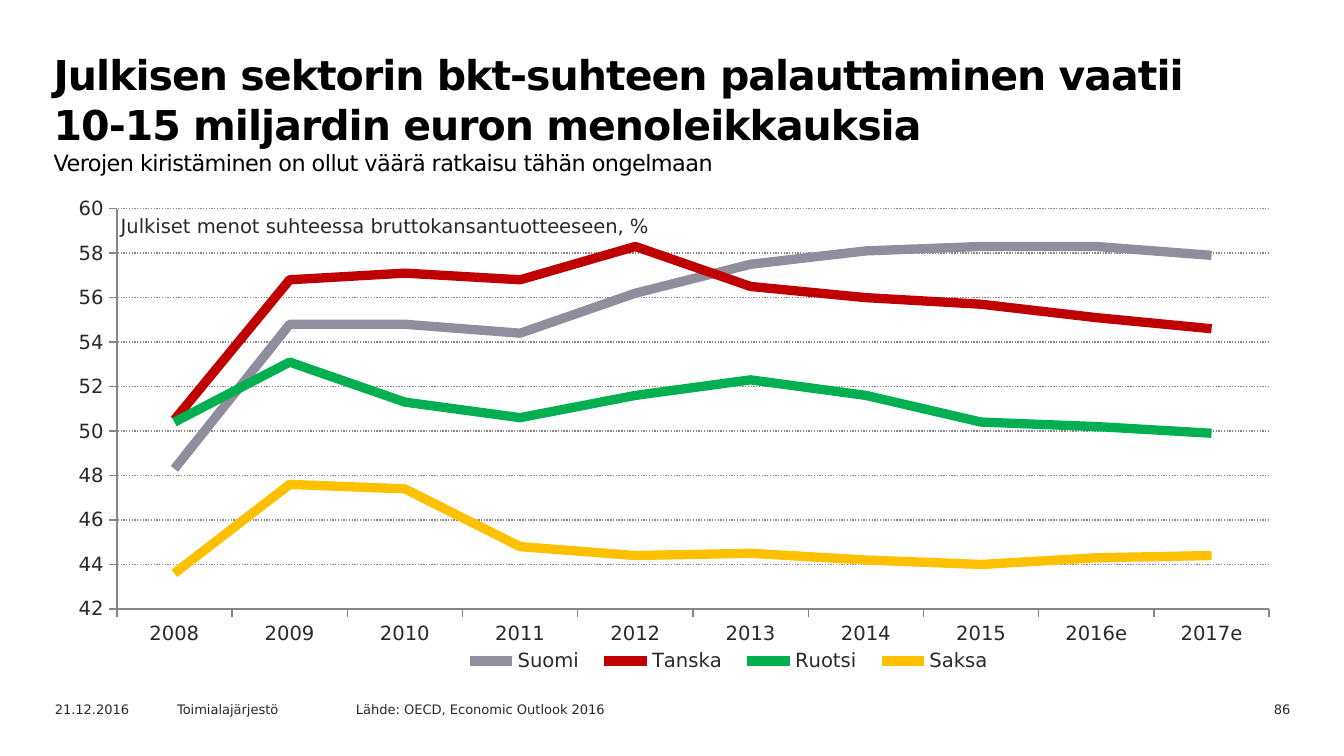
from lxml.etree import SubElement
from pptx import Presentation
from pptx.chart.data import CategoryChartData
from pptx.dml.color import RGBColor
from pptx.enum.chart import XL_CHART_TYPE, XL_LEGEND_POSITION, XL_TICK_MARK
from pptx.enum.dml import MSO_LINE
from pptx.enum.text import PP_ALIGN
from pptx.oxml.ns import qn
from pptx.util import Pt

INK = RGBColor(0x29, 0x28, 0x2E)
BLACK = RGBColor(0, 0, 0)
GREY = RGBColor(0x86, 0x86, 0x86)
FONT = "DejaVu Sans"

YEARS = [str(year) for year in range(2008, 2016)] + ["2016e", "2017e"]
SPEND = [
    ("Suomi", RGBColor(0x90, 0x8E, 0x9C),
     [48.3, 54.8, 54.8, 54.4, 56.2, 57.5, 58.1, 58.3, 58.3, 57.9]),
    ("Tanska", RGBColor(0xC0, 0, 0),
     [50.5, 56.8, 57.1, 56.8, 58.3, 56.5, 56, 55.7, 55.1, 54.6]),
    ("Ruotsi", RGBColor(0, 0xB0, 0x50),
     [50.4, 53.1, 51.3, 50.6, 51.6, 52.3, 51.6, 50.4, 50.2, 49.9]),
    ("Saksa", RGBColor(0xFF, 0xC0, 0),
     [43.6, 47.6, 47.4, 44.8, 44.4, 44.5, 44.2, 44, 44.3, 44.4]),
]


def style(font, size, color=INK, bold=False):
    font.name = FONT
    font.size = Pt(size)
    font.bold = bold
    font.color.rgb = color


def add_box(slide, left, top, width, height):
    box = slide.shapes.add_textbox(Pt(left), Pt(top), Pt(width), Pt(height))
    frame = box.text_frame
    frame.word_wrap = True
    return frame


def add_run(para, text, size, color=INK, bold=False, space=0):
    run = para.add_run()
    run.text = text
    style(run.font, size, color, bold)
    if space:
        run._r.get_or_add_rPr().set("spc", str(space))


def add_label(slide, text, left, top, width, height, size, align=PP_ALIGN.LEFT):
    para = add_box(slide, left, top, width, height).paragraphs[0]
    para.alignment = align
    add_run(para, text, size)


def add_title(slide):
    frame = add_box(slide, 20.2, 22.3, 641.5, 51)
    head = frame.paragraphs[0]
    head.line_spacing = Pt(27)
    add_run(head, "Julkisen sektorin bkt-suhteen palauttaminen vaatii "
            "10-15 miljardin euron menoleikkauksia", 22, BLACK, True, -50)
    sub = frame.add_paragraph()
    add_run(sub, "Verojen kiristäminen on ollut väärä ratkaisu tähän ongelmaan",
            12, BLACK, False, -30)
    for para in (head, sub):
        props = para._p.get_or_add_pPr()
        props.set("marL", str(Pt(1.44)))
        props.set("indent", "0")


def place(parent, index, box, inner=False):
    """Give a chart part a fixed place, as shares of the chart."""
    for old in parent.findall(qn("c:layout")):
        parent.remove(old)
    layout = SubElement(parent, qn("c:layout"))
    parent.insert(index, layout)
    manual = SubElement(layout, qn("c:manualLayout"))
    marks = [("layoutTarget", "inner")] if inner else []
    marks += [("xMode", "edge"), ("yMode", "edge"), *zip("xywh", box)]
    for tag, val in marks:
        SubElement(manual, qn("c:" + tag)).set("val", str(val))


def style_axis(axis):
    axis.major_tick_mark = XL_TICK_MARK.OUTSIDE
    axis.minor_tick_mark = XL_TICK_MARK.NONE
    axis.format.line.color.rgb = GREY
    axis.format.line.width = Pt(0.75)
    style(axis.tick_labels.font, 10.5)


def add_graph(slide):
    data = CategoryChartData()
    data.categories = YEARS
    for name, _, vals in SPEND:
        data.add_series(name, vals)
    chart = slide.shapes.add_chart(XL_CHART_TYPE.LINE, Pt(30.2), Pt(105.8),
                                   Pt(661), Pt(260), data).chart
    chart.has_title = False
    style(chart.font, 10)
    chart.font.name = "Arial Narrow"

    # Lines
    plot = chart.plots[0]
    plot.vary_by_categories = False
    for series, (_, color, _) in zip(plot.series, SPEND):
        series.smooth = False
        series.format.line.color.rgb = color
        series.format.line.width = Pt(5)

    # Axes
    style_axis(chart.category_axis)
    axis = chart.value_axis
    style_axis(axis)
    axis.minimum_scale, axis.maximum_scale, axis.major_unit = 42, 60, 2
    axis.tick_labels.number_format = "General"
    axis.tick_labels.number_format_is_linked = False
    grid = axis.major_gridlines.format.line
    grid.color.rgb = GREY
    grid.width = Pt(0.75)
    grid.dash_style = MSO_LINE.ROUND_DOT

    # Legend and layout
    chart.has_legend = True
    legend = chart.legend
    legend.position = XL_LEGEND_POSITION.BOTTOM
    legend.include_in_layout = False
    style(legend.font, 10.5)
    place(legend._element, 1, (0.32, 0.92, 0.45, 0.07))
    area = chart._chartSpace.chart.plotArea
    place(area, 0, (0.049, 0.022, 0.934, 0.826), True)


def main():
    deck = Presentation()
    deck.slide_width, deck.slide_height = Pt(720), Pt(405)
    slide = deck.slides.add_slide(deck.slide_layouts[6])

    # Footer
    for text, left, width in (
        ("21.12.2016", 22.3, 72),
        ("Toimialajärjestö", 87.8, 102),
        ("Lähde: OECD, Economic Outlook 2016", 183.6, 234),
    ):
        add_label(slide, text, left, 372.2, width, 13, 7)
    add_label(slide, "86", 630.7, 372.2, 67.7, 13, 7, PP_ALIGN.RIGHT)

    # Title, chart and chart caption
    add_title(slide)
    add_graph(slide)
    add_label(slide, "Julkiset menot suhteessa bruttokansantuotteeseen, %",
              57.6, 110.9, 360, 20, 10.5)
    deck.save("out.pptx")


if __name__ == "__main__":
    main()
